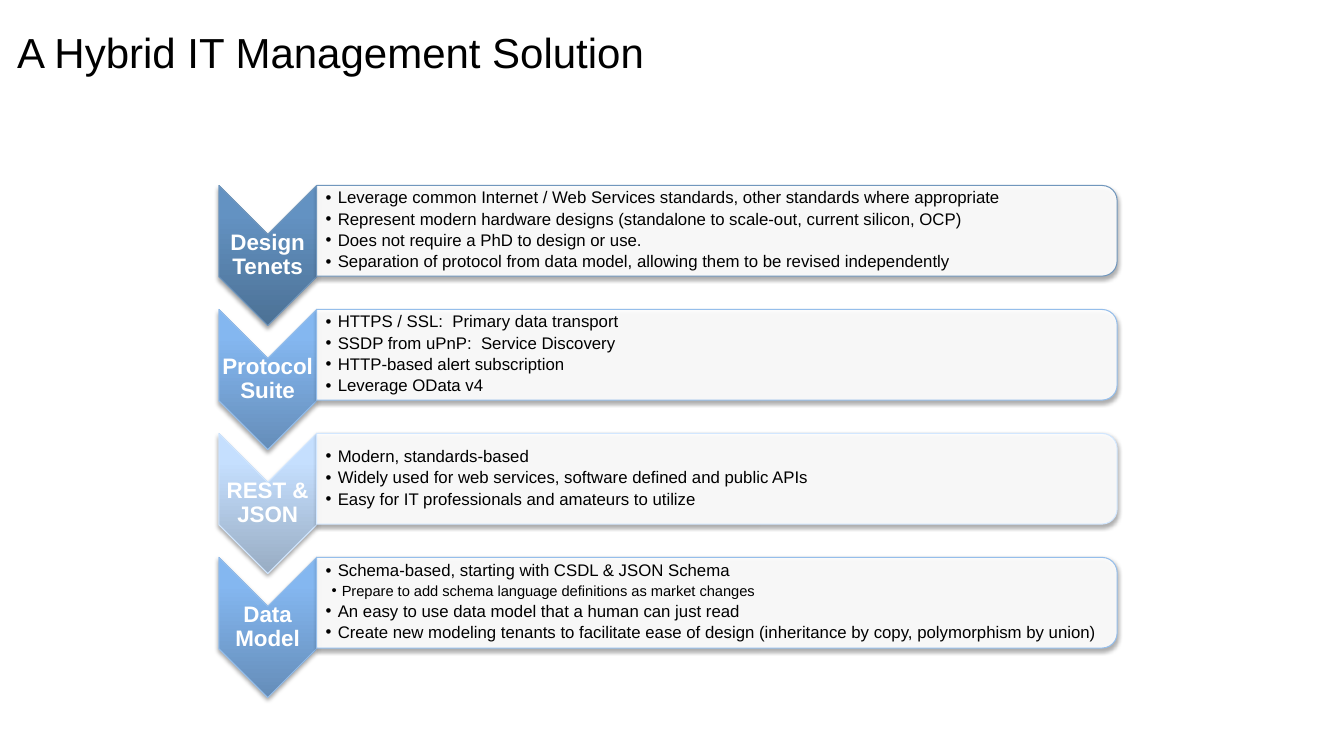
import copy

import lxml.etree
import pptx
import pptx.dml.color
import pptx.enum.shapes
import pptx.enum.text
import pptx.oxml.ns
import pptx.util

PX = 9144
FONT = "Arial"
RGB = pptx.dml.color.RGBColor
BLACK = RGB(0, 0, 0)
WHITE = RGB(255, 255, 255)
STEEL = (RGB(0x4C, 0x71, 0x95), RGB(0x63, 0x92, 0xC2),
         RGB(0x61, 0x93, 0xC4), RGB(0x71, 0x97, 0xBD))
SKY = (RGB(0x65, 0x8D, 0xB9), RGB(0x84, 0xB7, 0xF0),
       RGB(0x82, 0xB8, 0xF3), RGB(0x95, 0xBE, 0xEB))
PALE = (RGB(0x98, 0xAC, 0xC3), RGB(0xC5, 0xDF, 0xFE),
        RGB(0xC6, 0xE0, 0xFF), RGB(0xD2, 0xE7, 0xFF))
SHAPE = pptx.enum.shapes.MSO_SHAPE
ALIGN = pptx.enum.text.PP_ALIGN
ROW_PITCH = 123

ROWS = [
    ("Design Tenets", STEEL, [
        (1, "Leverage common Internet / Web Services standards, other standards where appropriate"),
        (1, "Represent modern hardware designs (standalone to scale-out, current silicon, OCP)"),
        (1, "Does not require a PhD to design or use."),
        (1, "Separation of protocol from data model, allowing them to be revised independently")]),
    ("Protocol Suite", SKY, [
        (1, "HTTPS / SSL:  Primary data transport"),
        (1, "SSDP from uPnP:  Service Discovery"),
        (1, "HTTP-based alert subscription"),
        (1, "Leverage OData v4")]),
    ("REST & JSON", PALE, [
        (1, "Modern, standards-based"),
        (1, "Widely used for web services, software defined and public APIs"),
        (1, "Easy for IT professionals and amateurs to utilize")]),
    ("Data Model", SKY, [
        (1, "Schema-based, starting with CSDL & JSON Schema"),
        (2, "Prepare to add schema language definitions as market changes"),
        (1, "An easy to use data model that a human can just read"),
        (1, "Create new modeling tenants to facilitate ease of design "
            "(inheritance by copy, polymorphism by union)")]),
]
LEVELS = {1: (12, 12, -12), 2: (10.5, 16, -10)}


def px(*lengths):
    return [round(n * PX) for n in lengths]


def add_xml(parent, tag, **attrs):
    return lxml.etree.SubElement(parent, pptx.oxml.ns.qn(tag), attrs)


def format_run(r, size, color, bold=False):
    r.font.name = FONT
    r.font.size = pptx.util.Pt(size)
    r.font.color.rgb = color
    r.font.bold = bold


def set_frame(tf, left, other):
    tf.word_wrap = True
    tf.vertical_anchor = pptx.enum.text.MSO_ANCHOR.MIDDLE
    tf.margin_left, tf.margin_top, tf.margin_right, tf.margin_bottom = px(
        left, other, other, other)


def add_turned(shapes, kind, x, y, w, h, line):
    sp = shapes.add_shape(kind, *px(x + (w - h) / 2, y + (h - w) / 2, h, w))
    sp.rotation = 90
    sp.line.color.rgb = line
    sp.line.width = pptx.util.Pt(0.75)
    sp.shadow.inherit = False
    effects = sp._element.spPr.find(pptx.oxml.ns.qn("a:effectLst"))
    shadow = add_xml(effects, "a:outerShdw", blurRad="40000", dist="23000",
                     dir="5400000", rotWithShape="0")
    add_xml(add_xml(shadow, "a:srgbClr", val="000000"), "a:alpha", val="35000")
    return sp


def add_chevron(shapes, x, y, w, h, label, palette):
    sp = add_turned(shapes, SHAPE.CHEVRON, x, y, w, h, palette[3])
    sp.fill.gradient()
    sp.fill.gradient_angle = 90
    grad = sp._element.spPr.find(pptx.oxml.ns.qn("a:gradFill"))
    grad.set("rotWithShape", "0")
    stop_list = grad.find(pptx.oxml.ns.qn("a:gsLst"))
    stop_list.append(copy.deepcopy(stop_list[0]))
    for stop, position, color in zip(sp.fill.gradient_stops, (0, 0.8, 1), palette):
        stop.position = position
        stop.color.rgb = color

    tf = shapes.add_textbox(*px(x, y + 48, w, 42)).text_frame
    set_frame(tf, 1, 1)
    p = tf.paragraphs[0]
    p.text = label
    p.alignment = ALIGN.CENTER
    p.line_spacing = 0.9
    format_run(p.runs[0], 16, WHITE, True)


def add_panel(shapes, x, y, w, h, bullets, line):
    sp = add_turned(shapes, SHAPE.ROUND_2_SAME_RECTANGLE, x, y, w, h, line)
    sp.fill.solid()
    sp.fill.fore_color.rgb = WHITE
    color = sp._element.spPr.find(pptx.oxml.ns.qn("a:solidFill"))[0]
    add_xml(color, "a:alpha", val="90000")

    tf = shapes.add_textbox(*px(x, y + 4, w - 4, h - 9)).text_frame
    set_frame(tf, 9, 1)
    for i, (level, text) in enumerate(bullets):
        p = tf.add_paragraph() if i else tf.paragraphs[0]
        p.text = text
        size, margin, indent = LEVELS[level]
        pPr = p._p.get_or_add_pPr()
        pPr.set("marL", str(margin * PX))
        pPr.set("indent", str(indent * PX))
        add_xml(pPr, "a:buFont", typeface=FONT)
        add_xml(pPr, "a:buChar", char="•")
        p.level = level
        p.alignment = ALIGN.LEFT
        p.line_spacing = 0.9
        p.space_after = pptx.util.Pt(2.3)
        format_run(p.runs[0], size, BLACK)


def add_row(slide, x, y, label, palette, bullets):
    shapes = slide.shapes.add_group_shape().shapes
    add_chevron(shapes, x, y, 97, 139, label, palette)
    add_panel(shapes, x + 97, y, 794, 90, bullets, palette[3])


def add_title(slide, x, y, w, h, text):
    title = slide.shapes.title
    title.left, title.top, title.width, title.height = px(x, y, w, h)
    tf = title.text_frame
    tf.text = text
    set_frame(tf, 7, 7)
    p = tf.paragraphs[0]
    p.alignment = ALIGN.LEFT
    format_run(p.runs[0], 30, BLACK)


def main():
    prs = pptx.Presentation()
    prs.slide_width, prs.slide_height = px(1333, 750)
    slide = prs.slides.add_slide(prs.slide_layouts.get_by_name("Title Only"))
    add_title(slide, 10, 19, 1244, 64, "A Hybrid IT Management Solution")
    for i, (label, palette, bullets) in enumerate(ROWS):
        add_row(slide, 217, 184 + i * ROW_PITCH, label, palette, bullets)
    prs.save("out.pptx")


if __name__ == "__main__":
    main()
